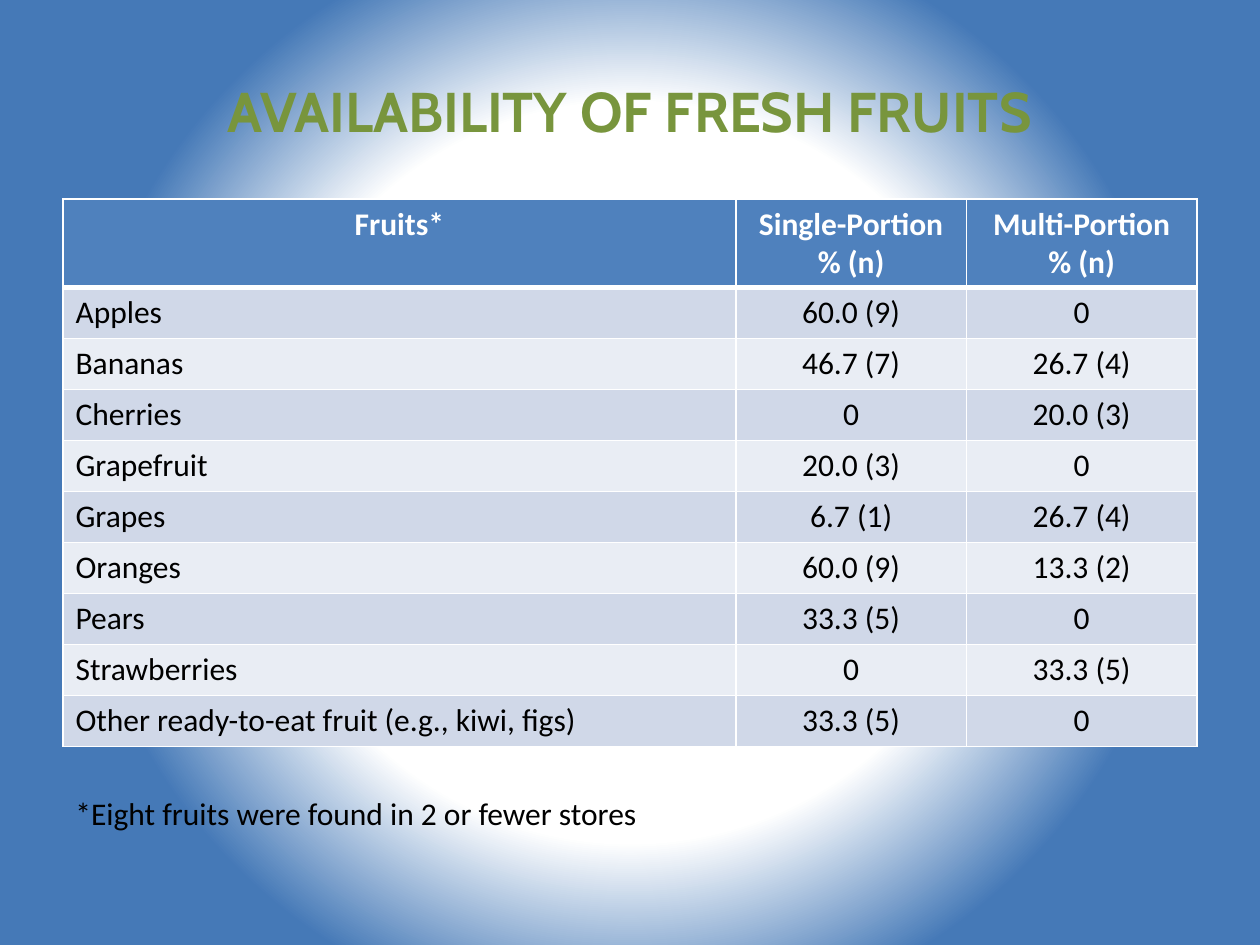
from dataclasses import dataclass

from lxml import etree
from pptx import Presentation
from pptx import util as u
from pptx.dml.color import RGBColor
from pptx.enum import text
from pptx.oxml.ns import qn


@dataclass(frozen=True)
class Theme:
    title: str = "78953D"
    edge: str = "4579B7"
    header: str = "4F81BD"
    bands: tuple = ("D0D8E8", "E9EDF4")
    light: str = "FFFFFF"
    ink: str = "000000"
    title_font: str = "Cabin"
    body_font: str = "Calibri"
    title_size: int = 32
    body_size: int = 18
    thin: int = 1
    thick: int = 3


COLUMN_WIDTHS = (5.34, 1.83, 1.83)
HEADER_HEIGHT, ROW_HEIGHT = 0.7, 0.405
HEADER = ("Fruits*", "Single-Portion\n% (n)", "Multi-Portion\n% (n)")
FRUITS = [
    ("Apples", "60.0 (9)", "0"),
    ("Bananas", "46.7 (7)", "26.7 (4)"),
    ("Cherries", "0", "20.0 (3)"),
    ("Grapefruit", "20.0 (3)", "0"),
    ("Grapes", "6.7 (1)", "26.7 (4)"),
    ("Oranges", "60.0 (9)", "13.3 (2)"),
    ("Pears", "33.3 (5)", "0"),
    ("Strawberries", "0", "33.3 (5)"),
    ("Other ready-to-eat fruit (e.g., kiwi, figs)", "33.3 (5)", "0"),
]


class SlideBuilder:
    def __init__(self, slide, theme):
        self.s = slide
        self.theme = theme

    def style(self, tf, size, font, color, bold=False, centered=False):
        for p in tf.paragraphs:
            p.alignment = text.PP_ALIGN.CENTER if centered else text.PP_ALIGN.LEFT
            for r in p.runs:
                r.font.size = u.Pt(size)
                r.font.name = font
                r.font.bold = bold
                r.font.color.rgb = RGBColor.from_string(color)

    def radial_background(self):
        fill = self.s.background.fill
        fill.gradient()
        stops = ((0.47, self.theme.light), (0.71, self.theme.edge))
        for stop, (position, color) in zip(fill.gradient_stops, stops):
            stop.position = position
            stop.color.rgb = RGBColor.from_string(color)
        lin = next(self.s.element.iter(qn("a:lin")))
        circle = etree.Element(qn("a:path"), path="circle")
        etree.SubElement(circle, qn("a:fillToRect"),
                         dict.fromkeys("ltrb", "50000"))
        lin.getparent().replace(lin, circle)

    def text_box(self, left, top, width, height, words, wrap=True, anchor=None, **style):
        box = self.s.shapes.add_textbox(*map(u.Inches, (left, top, width, height)))
        tf = box.text_frame
        tf.word_wrap = wrap
        tf.vertical_anchor = anchor
        tf.text = words
        self.style(tf, **style)

    def cell_borders(self, cell, top, bottom):
        thin = self.theme.thin
        tc_pr = cell._tc.get_or_add_tcPr()
        for side, width in (("L", thin), ("R", thin), ("T", top), ("B", bottom)):
            ln = etree.SubElement(tc_pr, qn(f"a:ln{side}"), w=str(u.Pt(width)))
            fill = etree.SubElement(ln, qn("a:solidFill"))
            etree.SubElement(fill, qn("a:srgbClr"), val=self.theme.light)

    def table(self, left, top, header, rows):
        t = self.theme
        height = HEADER_HEIGHT + ROW_HEIGHT * len(rows)
        frame = self.s.shapes.add_table(
            len(rows) + 1, len(header),
            *map(u.Inches, (left, top, sum(COLUMN_WIDTHS), height)))
        table = frame.table
        for column, width in zip(table.columns, COLUMN_WIDTHS):
            column.width = u.Inches(width)
        for i, values in enumerate([header, *rows]):
            is_header = i == 0
            table.rows[i].height = u.Inches(HEADER_HEIGHT if is_header else ROW_HEIGHT)
            for j, value in enumerate(values):
                cell = table.cell(i, j)
                cell.text_frame.text = value
                self.style(cell.text_frame, t.body_size, t.body_font,
                           t.light if is_header else t.ink,
                           bold=is_header, centered=is_header or j > 0)
                self.cell_borders(cell, top=t.thick if i == 1 else t.thin,
                                  bottom=t.thick if is_header else t.thin)
                cell.fill.solid()
                cell.fill.fore_color.rgb = RGBColor.from_string(
                    t.header if is_header else t.bands[(i - 1) % 2])


def main():
    prs = Presentation()
    prs.slide_width, prs.slide_height = u.Inches(10), u.Inches(7.5)
    theme = Theme()
    builder = SlideBuilder(prs.slides.add_slide(prs.slide_layouts[6]), theme)
    builder.radial_background()
    builder.text_box(0.5, 0.25, 9, 1.25, "AVAILABILITY OF FRESH FRUITS",
                     anchor=text.MSO_ANCHOR.MIDDLE, size=theme.title_size,
                     font=theme.title_font, color=theme.title,
                     bold=True, centered=True)
    builder.table(0.5, 1.58, HEADER, FRUITS)
    builder.text_box(0.5, 6.25, 4.71, 0.4,
                     "*Eight fruits were found in 2 or fewer stores", wrap=False,
                     size=theme.body_size, font=theme.body_font, color=theme.ink)
    prs.save("out.pptx")


if __name__ == "__main__":
    main()
